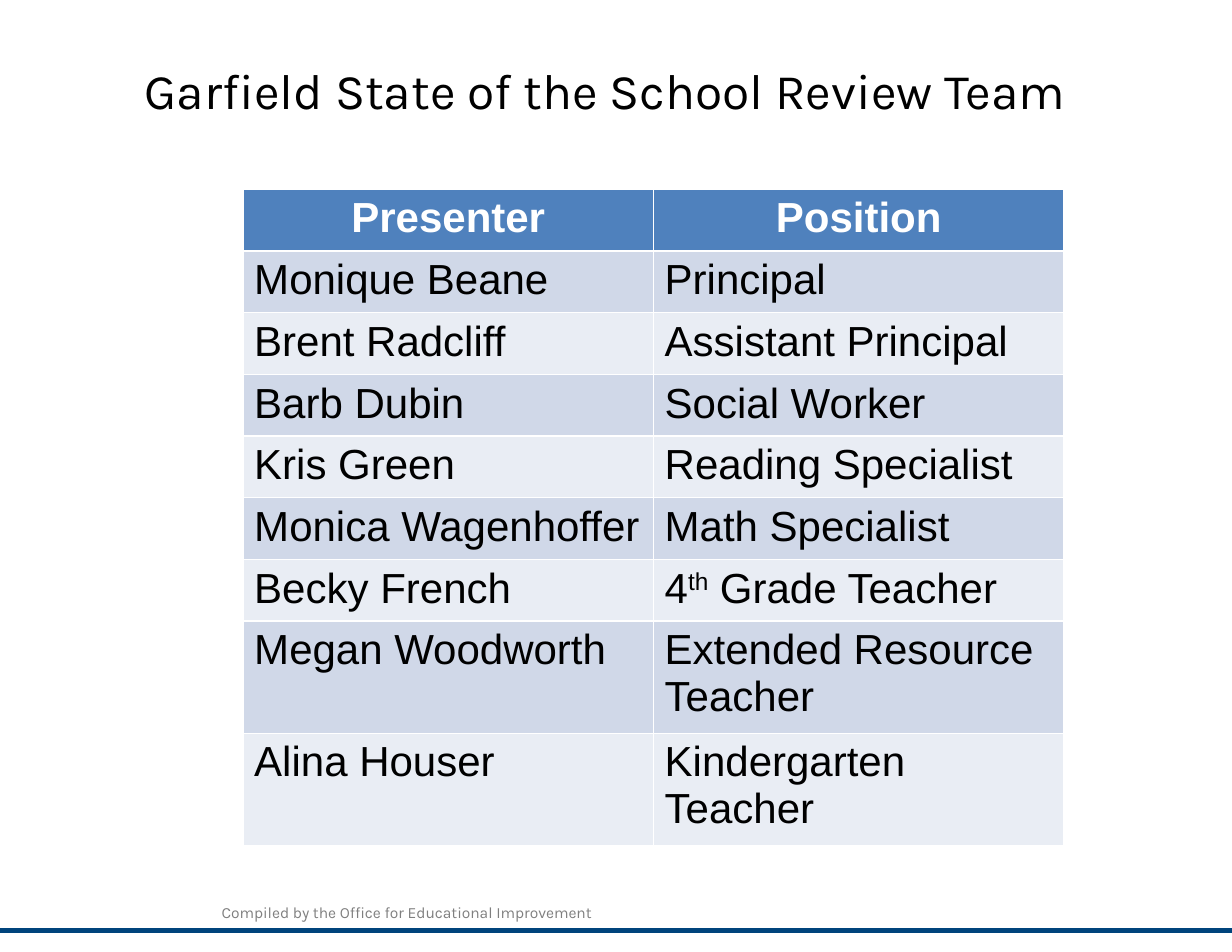
from lxml.etree import SubElement
from pptx import Presentation
from pptx.dml.color import RGBColor
from pptx.enum.shapes import MSO_CONNECTOR
from pptx.enum.text import MSO_ANCHOR, MSO_AUTO_SIZE, PP_ALIGN
from pptx.oxml.ns import qn
from pptx.util import Inches, Pt

COLORS = {
    "ink": "000000",
    "paper": "FFFFFF",
    "header": "4F81BD",
    "odd": "D0D8E8",
    "even": "E9EDF4",
    "footer": "7F7F7F",
    "rule": "00447C",
}
TEAM = [
    ("Presenter", ["Position"]),
    ("Monique Beane", ["Principal"]),
    ("Brent Radcliff", ["Assistant Principal"]),
    ("Barb Dubin", ["Social Worker"]),
    ("Kris Green", ["Reading Specialist"]),
    ("Monica Wagenhoffer", ["Math Specialist"]),
    ("Becky French", ["4", "th", " Grade Teacher"]),
    ("Megan Woodworth", ["Extended Resource Teacher"]),
    ("Alina Houser", ["Kindergarten Teacher"]),
]
COLUMN, ROW = Inches(3.665), Inches(0.41)


def add_run(paragraph, text, size, font, color, bold=False):
    run = paragraph.add_run()
    run.text = text
    run.font.size = Pt(size)
    run.font.name = font
    run.font.bold = bold
    run.font.color.rgb = RGBColor.from_string(COLORS[color])
    return run


deck = Presentation()
deck.slide_width, deck.slide_height = Inches(11), Inches(8.5)
slide = deck.slides.add_slide(deck.slide_layouts[5])

rule_y = Inches(8.31)
rule = slide.shapes.add_connector(
    MSO_CONNECTOR.STRAIGHT, 0, rule_y, deck.slide_width, rule_y)
rule.line.color.rgb = RGBColor.from_string(COLORS["rule"])
rule.line.width = Pt(3)
SubElement(rule._element.spPr, qn("a:effectLst"))

credit = slide.shapes.add_textbox(
    Inches(1.88), Inches(8.01), Inches(4.35), Inches(0.27)).text_frame
credit.word_wrap = True
credit.auto_size = MSO_AUTO_SIZE.SHAPE_TO_FIT_TEXT
add_run(credit.paragraphs[0], "Compiled by the Office for Educational Improvement",
        10, "Karla", "footer")

title = slide.shapes.title
title.left, title.top = Inches(0.46), Inches(0.21)
title.width, title.height = Inches(9.9), Inches(1.18)
heading = title.text_frame
heading.vertical_anchor = MSO_ANCHOR.MIDDLE
heading.margin_left = heading.margin_right = Inches(0.11)
heading.margin_top = heading.margin_bottom = Inches(0.06)
heading.paragraphs[0].alignment = PP_ALIGN.CENTER
add_run(heading.paragraphs[0], "Garfield State of the School Review Team",
        32, "Karla", "ink")

roster = slide.shapes.add_table(
    len(TEAM), 2, Inches(2.17), Inches(1.69), 2 * COLUMN, len(TEAM) * ROW).table
for row, (presenter, position) in enumerate(TEAM):
    is_header = row == 0
    band = "header" if is_header else "odd" if row % 2 else "even"
    for column, parts in enumerate([[presenter], position]):
        cell = roster.cell(row, column)
        cell.fill.solid()
        cell.fill.fore_color.rgb = RGBColor.from_string(COLORS[band])
        entry = cell.text_frame.paragraphs[0]
        entry.alignment = PP_ALIGN.CENTER if is_header else PP_ALIGN.LEFT
        for part in parts:
            run = add_run(entry, part, 27, "Arial",
                          "paper" if is_header else "ink", is_header)
            if part == "th":
                run.font._element.set("baseline", "30000")

deck.save("out.pptx")
